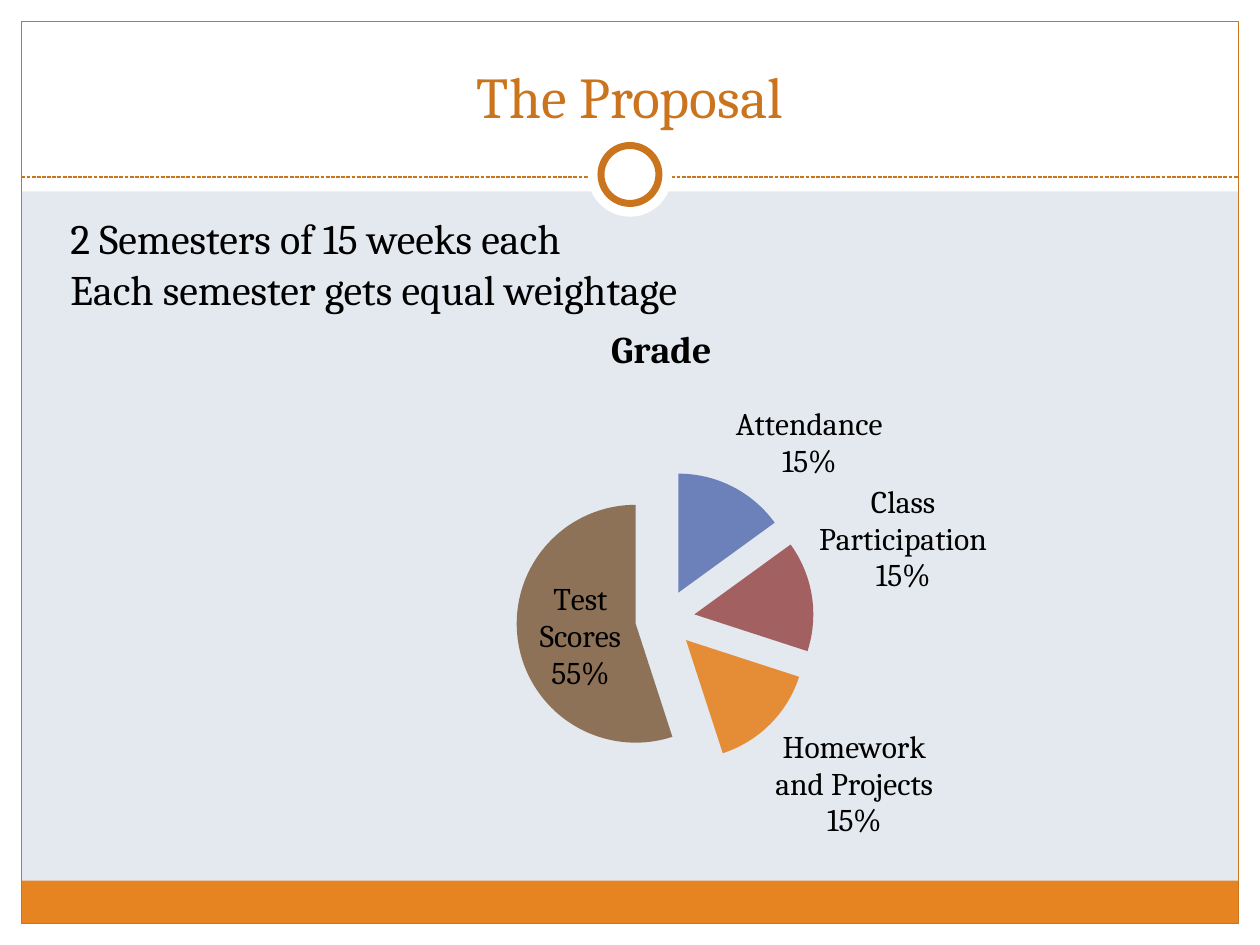
from dataclasses import dataclass

from lxml.etree import SubElement
from pptx import Presentation
from pptx.chart.data import CategoryChartData
from pptx.dml.color import RGBColor
from pptx.enum.chart import XL_CHART_TYPE as ChartType, XL_LABEL_POSITION as LabelPosition
from pptx.enum.dml import MSO_LINE_DASH_STYLE as Dash
from pptx.enum.shapes import MSO_CONNECTOR as Connector, MSO_SHAPE as Shape
from pptx.enum.text import MSO_ANCHOR as Anchor, PP_ALIGN as Align
from pptx.oxml import parse_xml
from pptx.oxml.ns import nsdecls, qn
from pptx.util import Inches, Pt


@dataclass(frozen=True)
class Theme:
    font: str = "Cambria"
    background: str = "E4E9EF"
    white: str = "FFFFFF"
    text: str = "000000"
    accent: str = "CB741E"
    footer: str = "E68422"
    slices: tuple = ("6076B4", "9C5252", "E68422", "846648")
    slice_alpha: int = 90000
    title_size: float = 33
    body_size: float = 24
    chart_title_size: float = 21.6
    label_size: float = 18


THEME = Theme()


def rgb(value):
    return RGBColor.from_string(value)


def style_font(font, size, color=THEME.text):
    font.name = THEME.font
    font.size = Pt(size)
    font.color.rgb = rgb(color)


def add_block(slide, box, kind=Shape.RECTANGLE, fill=None, line=None, width=0.75):
    shape = slide.shapes.add_shape(kind, *map(Inches, box))
    shape.shadow.inherit = False
    if fill:
        shape.fill.solid()
        shape.fill.fore_color.rgb = rgb(fill)
    else:
        shape.fill.background()
    if line:
        shape.line.color.rgb = rgb(line)
        shape.line.width = Pt(width)
    else:
        shape.line.fill.background()


def add_text(slide, box, lines, size, color, align=Align.LEFT, anchor=Anchor.TOP):
    frame = slide.shapes.add_textbox(*map(Inches, box)).text_frame
    frame.word_wrap = True
    frame.vertical_anchor = anchor
    for index, line in enumerate(lines):
        paragraph = frame.paragraphs[0] if index == 0 else frame.add_paragraph()
        paragraph.alignment = align
        run = paragraph.add_run()
        run.text = line
        style_font(run.font, size, color)


def add_frame(slide, box, margin=0.17, header=1.52, footer=0.34):
    left, top, width, height = box
    right, bottom = left + width, top + height
    inner_width = width - 2 * margin
    for band in (
        (left, bottom - margin, width, margin),
        (left, top, width, header),
        (left, top, margin, height),
        (right - margin, top, margin, height),
    ):
        add_block(slide, band, fill=THEME.white)
    add_block(slide, (left + margin, bottom - margin - footer, inner_width, footer), fill=THEME.footer)
    add_block(slide, (left + margin, top + margin, inner_width, height - 2 * margin), line=THEME.accent)


def add_divider(slide, box):
    left, top, width, height = box
    line_y = Inches(top + height / 2 + 0.02)
    line = slide.shapes.add_connector(
        Connector.STRAIGHT, Inches(left), line_y, Inches(left + width), line_y
    )
    line.line.color.rgb = rgb(THEME.accent)
    line.line.width = Pt(0.75)
    line.line.dash_style = Dash.SQUARE_DOT
    SubElement(line._element.spPr, qn("a:effectLst"))
    for diameter, outline in ((height, None), (0.46, THEME.accent)):
        circle = (left + (width - diameter) / 2, top + (height - diameter) / 2, diameter, diameter)
        add_block(slide, circle, Shape.OVAL, THEME.white, outline, 4)


def add_grade_chart(slide, box):
    data = CategoryChartData()
    data.categories = ["Attendance", "Class Participation", "Homework and Projects", "Test Scores"]
    data.add_series("Grade", (15, 15, 15, 55))
    chart = slide.shapes.add_chart(ChartType.PIE, *map(Inches, box), data).chart
    style_font(chart.font, THEME.label_size)
    chart.has_legend = False
    chart.has_title = True
    run = chart.chart_title.text_frame.paragraphs[0].add_run()
    run.text = "Grade"
    style_font(run.font, THEME.chart_title_size)
    run.font.bold = True

    plot = chart.plots[0]
    plot.vary_by_categories = True
    series = plot.series[0]
    for index, color in enumerate(THEME.slices):
        point_format = series.points[index].format
        point_format.fill.solid()
        point_format.fill.fore_color.rgb = rgb(color)
        point_format.line.fill.background()
    for color_element in series._element.iter(qn("a:srgbClr")):
        SubElement(color_element, qn("a:alpha"), val=str(THEME.slice_alpha))
    series._element.find(qn("c:dPt")).addprevious(
        parse_xml(f'<c:explosion {nsdecls("c")} val="25"/>')
    )

    labels = series.data_labels
    labels.show_category_name = True
    labels.show_percentage = True
    labels.show_value = False
    labels.number_format = "0%"
    labels.number_format_is_linked = False
    labels.position = LabelPosition.BEST_FIT
    style_font(labels.font, THEME.label_size)
    separator = parse_xml(f'<c:separator {nsdecls("c")}>\n</c:separator>')
    labels._element.find(qn("c:showBubbleSize")).addnext(separator)


def build_proposal(slide, box):
    slide.background.fill.solid()
    slide.background.fill.fore_color.rgb = rgb(THEME.background)
    left, top, width, height = box
    add_frame(slide, box)
    add_divider(slide, (left + 0.17, top + 1.05, width - 0.34, 0.67))
    add_text(
        slide, (left + 0.33, top + 0.25, width - 0.66, 0.83), ["The Proposal"],
        THEME.title_size, THEME.accent, Align.CENTER, Anchor.BOTTOM,
    )
    add_grade_chart(slide, (left + 1.46, top + 2.38, 7.58, 4.53))
    add_text(
        slide, (left + 0.46, top + 1.64, 6.05, 0.91),
        ["2 Semesters of 15 weeks each", "Each semester gets equal weightage"],
        THEME.body_size, THEME.text,
    )


def main():
    presentation = Presentation()
    presentation.slide_width = Inches(10)
    presentation.slide_height = Inches(7.5)
    slide = presentation.slides.add_slide(presentation.slide_layouts[6])
    build_proposal(slide, (0, 0, 10, 7.5))
    presentation.save("out.pptx")


if __name__ == "__main__":
    main()
